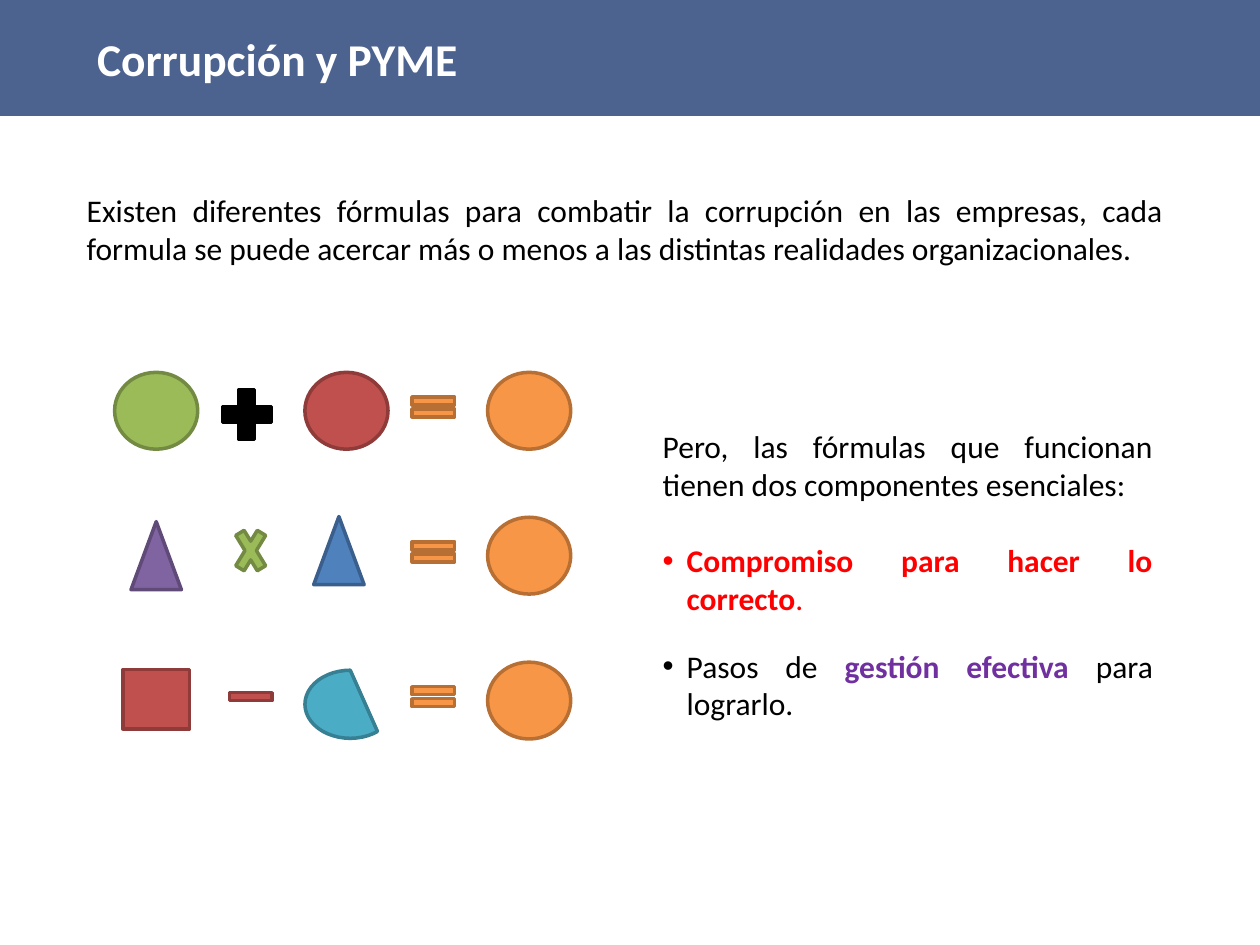
import pptx
import pptx.util
import pptx.dml.color
import pptx.enum.shapes
import pptx.enum.text
import pptx.oxml
import pptx.oxml.ns

Inches = pptx.util.Inches
Pt = pptx.util.Pt
RGBColor = pptx.dml.color.RGBColor
KIND = pptx.enum.shapes.MSO_SHAPE
ALIGN = pptx.enum.text.PP_ALIGN
ANCHOR = pptx.enum.text.MSO_ANCHOR

# Colours
NAVY = RGBColor(0x00, 0x20, 0x60)
WHITE = RGBColor(0xFF, 0xFF, 0xFF)
BLACK = RGBColor(0x00, 0x00, 0x00)
ALERT = RGBColor(0xFF, 0x00, 0x00)
VIOLET = RGBColor(0x70, 0x30, 0xA0)
# Fill and outline pairs for the symbols
INK = (BLACK, BLACK)
GREEN = (RGBColor(0x9B, 0xBB, 0x59), RGBColor(0x73, 0x8A, 0x42))
RED = (RGBColor(0xC0, 0x50, 0x4D), RGBColor(0x8E, 0x3B, 0x39))
ORANGE = (RGBColor(0xF7, 0x96, 0x46), RGBColor(0xB7, 0x6F, 0x34))
PURPLE = (RGBColor(0x80, 0x64, 0xA2), RGBColor(0x5F, 0x4A, 0x78))
BLUE = (RGBColor(0x4F, 0x81, 0xBD), RGBColor(0x3A, 0x5F, 0x8C))
TEAL = (RGBColor(0x4B, 0xAC, 0xC6), RGBColor(0x37, 0x7F, 0x92))

# Content: a run is (text, colour, bold)
TITLE = [("Corrupción y PYME", WHITE, True)]
INTRO = [("Existen diferentes fórmulas para combatir la corrupción en las "
          "empresas, cada formula se puede acercar más o menos a las "
          "distintas realidades organizacionales.", BLACK, False)]
# A point is (bulleted, space before in points, runs)
POINTS = [
    (False, 0, [("Pero, las fórmulas que funcionan tienen dos componentes "
                 "esenciales:", BLACK, False)]),
    (True, 22, [("Compromiso para hacer lo correcto", ALERT, True),
                (".", ALERT, False)]),
    (True, 17, [("Pasos de ", BLACK, False),
                ("gestión efectiva ", VIOLET, True),
                ("para lograrlo.", BLACK, False)]),
]

# Formulas: a symbol is (kind, colours, width, height, shift x, shift y)
EQUAL = (KIND.MATH_EQUAL, ORANGE, 0.46, 0.27, 0, -0.03)
RESULT = (KIND.OVAL, ORANGE, 0.66, 0.61, 0, 0)
FORMULAS = [
    [(KIND.OVAL, GREEN, 0.66, 0.61, 0, 0),
     (KIND.MATH_PLUS, INK, 0.53, 0.54, -0.03, 0.03),
     (KIND.OVAL, RED, 0.66, 0.61, 0, 0), EQUAL, RESULT],
    [(KIND.ISOSCELES_TRIANGLE, PURPLE, 0.4, 0.54, 0, 0),
     (KIND.MATH_MULTIPLY, GREEN, 0.33, 0.54, 0, -0.04),
     (KIND.ISOSCELES_TRIANGLE, BLUE, 0.4, 0.54, -0.06, -0.04), EQUAL, RESULT],
    [(KIND.RECTANGLE, RED, 0.53, 0.47, 0, -0.01),
     (KIND.MATH_MINUS, RED, 0.46, 0.27, 0, -0.03),
     (KIND.CHORD, TEAL, 0.72, 0.54, 0.03, 0.03), EQUAL, RESULT],
]
COLS = [1.24, 1.99, 2.75, 3.44, 4.2]
TOP, PITCH = 3.26, 1.15


def place(shape, *box):
    shape.left, shape.top, shape.width, shape.height = map(Inches, box)


def write(para, runs, size, align=ALIGN.JUSTIFY):
    para.alignment = align
    for text, color, bold in runs:
        run = para.add_run()
        run.text = text
        run.font.name = "Calibri"
        run.font.size = Pt(size)
        run.font.bold = bold
        run.font.color.rgb = color


def indent(para, bullet):
    props = para._p.get_or_add_pPr()
    depth = Inches(0.19) if bullet else 0
    props.set("marL", str(depth))
    props.set("indent", str(-depth))
    tag = 'buChar char="•"' if bullet else "buNone"
    space = pptx.oxml.ns.nsdecls("a")
    props.append(pptx.oxml.parse_xml(f"<a:{tag.replace(' ', f' {space} ', 1)}/>"
                                     if bullet else f"<a:{tag} {space}/>"))


deck = pptx.Presentation()
deck.slide_width, deck.slide_height = Inches(10), Inches(7.5)
slide = deck.slides.add_slide(deck.slide_layouts[1])

# Symbols, centred on a grid
group = slide.shapes.add_group_shape()
for row, symbols in enumerate(FORMULAS):
    for col, (kind, (fill, edge), wide, high, dx, dy) in zip(COLS, symbols):
        left = col + dx - wide / 2
        top = TOP + row * PITCH + dy - high / 2
        shape = group.shapes.add_shape(
            kind, Inches(left), Inches(top), Inches(wide), Inches(high))
        shape.shadow.inherit = False
        shape.fill.solid()
        shape.fill.fore_color.rgb = fill
        shape.line.color.rgb = edge
        shape.line.width = Pt(2)

# Introduction
intro = slide.shapes.add_textbox(
    Inches(0.59), Inches(1.47), Inches(8.74), Inches(0.71))
intro.text_frame.word_wrap = True
write(intro.text_frame.paragraphs[0], INTRO, 18)

# Essential components
body = slide.placeholders[1]
place(body, 5.16, 3.34, 4.09, 2.5)
frame = body.text_frame
frame.auto_size = pptx.enum.text.MSO_AUTO_SIZE.NONE
for i, (bullet, gap, runs) in enumerate(POINTS):
    para = frame.add_paragraph() if i else frame.paragraphs[0]
    para.space_before = Pt(gap)
    indent(para, bullet)
    write(para, runs, 18)

# Title band, 70 % opaque
title = slide.shapes.title
place(title, 0, 0, 10, 0.92)
title.fill.solid()
title.fill.fore_color.rgb = NAVY
tint = title.fill._xPr.find(".//" + pptx.oxml.ns.qn("a:srgbClr"))
tint.append(pptx.oxml.parse_xml(
    f'<a:alpha {pptx.oxml.ns.nsdecls("a")} val="70000"/>'))
title.text_frame.auto_size = pptx.enum.text.MSO_AUTO_SIZE.NONE
title.text_frame.vertical_anchor = ANCHOR.MIDDLE
title.text_frame.margin_left = Inches(0.77)
write(title.text_frame.paragraphs[0], TITLE, 26, ALIGN.LEFT)

deck.save("out.pptx")
